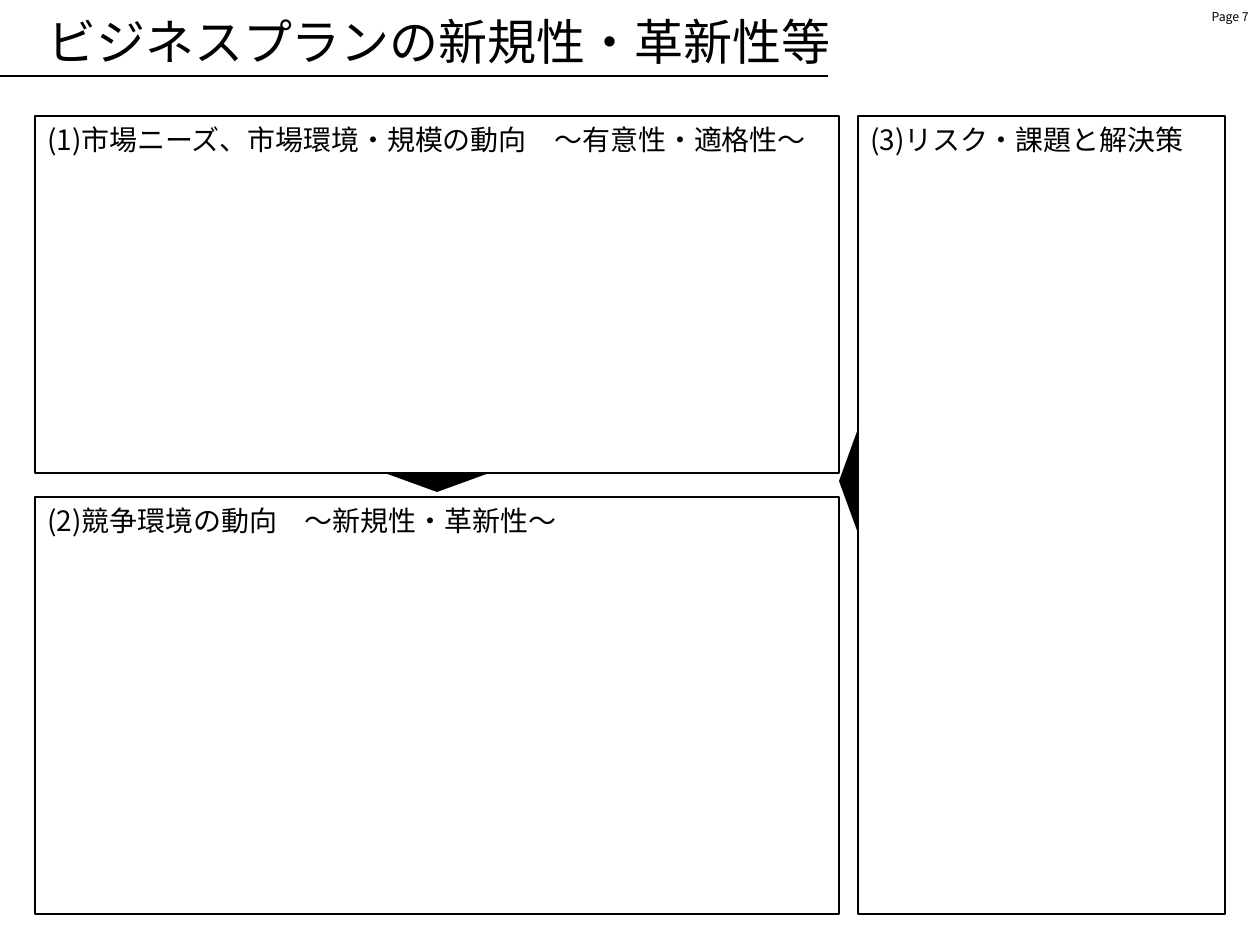
from lxml import etree
from pptx import Presentation
from pptx import util as u
from pptx.dml.color import RGBColor
from pptx.enum import shapes, text
from pptx.oxml.ns import qn

BLACK = RGBColor(0x00, 0x00, 0x00)
FONT = "Noto Sans CJK JP"
PX = 914400 / 126


def px(*lengths):
    return [u.Emu(round(length * PX)) for length in lengths]


def write_text(shape, content, size, align=text.PP_ALIGN.LEFT,
               anchor=text.MSO_ANCHOR.TOP, color=BLACK):
    frame = shape.text_frame
    frame.word_wrap = True
    frame.vertical_anchor = anchor
    paragraph = frame.paragraphs[0]
    paragraph.alignment = align
    run = paragraph.add_run()
    run.text = content
    run.font.size = u.Pt(size)
    run.font.color.rgb = color
    run.font.name = FONT
    east_asian = etree.SubElement(run.font._element, qn("a:ea"))
    east_asian.set("typeface", FONT)


class SlideBuilder:
    def __init__(self, slide, color=BLACK, line_width=0.75):
        self.slide = slide
        self.color = color
        self.line_width = u.Pt(line_width)

    def label(self, box, content, size, **style):
        shape = self.slide.shapes.add_textbox(*px(*box))
        write_text(shape, content, size, **style)

    def rule(self, x1, y1, x2, y2):
        line = self.slide.shapes.add_connector(
            shapes.MSO_CONNECTOR.STRAIGHT, *px(x1, y1, x2, y2))
        line.line.color.rgb = self.color
        line.line.width = self.line_width
        etree.SubElement(line._element.spPr, qn("a:effectLst"))

    def panel(self, box, heading):
        shape = self.slide.shapes.add_shape(
            shapes.MSO_SHAPE.RECTANGLE, *px(*box))
        shape.shadow.inherit = False
        shape.fill.background()
        shape.line.color.rgb = self.color
        shape.line.width = self.line_width
        write_text(shape, heading, 16)

    def pointer(self, center_x, center_y, rotation, width=110, height=20):
        shape = self.slide.shapes.add_shape(
            shapes.MSO_SHAPE.ISOSCELES_TRIANGLE,
            *px(center_x - width / 2, center_y - height / 2, width, height))
        shape.rotation = rotation
        shape.shadow.inherit = False
        shape.fill.solid()
        shape.fill.fore_color.rgb = self.color
        shape.line.fill.background()


def main():
    presentation = Presentation()
    presentation.slide_width, presentation.slide_height = px(1260, 945)
    slide = presentation.slides.add_slide(presentation.slide_layouts[6])
    builder = SlideBuilder(slide)

    # Header
    builder.label((1044, 3, 217, 28), "Page 7", 7, align=text.PP_ALIGN.RIGHT)
    builder.rule(0, 76, 828, 76)
    builder.label((35, 16, 1162, 49), "ビジネスプランの新規性・革新性等", 28,
                  anchor=text.MSO_ANCHOR.MIDDLE)

    # Panels
    left, top, bottom, width = 35, 116, 914, 804
    second_top, third_left = 497, 858
    builder.panel((left, top, width, 357),
                  "(1)市場ニーズ、市場環境・規模の動向　～有意性・適格性～")
    builder.panel((left, second_top, width, bottom - second_top),
                  "(2)競争環境の動向　～新規性・革新性～")
    builder.panel((third_left, top, 367, bottom - top),
                  "(3)リスク・課題と解決策")

    # Pointers between panels
    builder.pointer(left + width / 2, 482, 180)
    builder.pointer(849, 481, 270)

    presentation.save("out.pptx")


if __name__ == "__main__":
    main()
